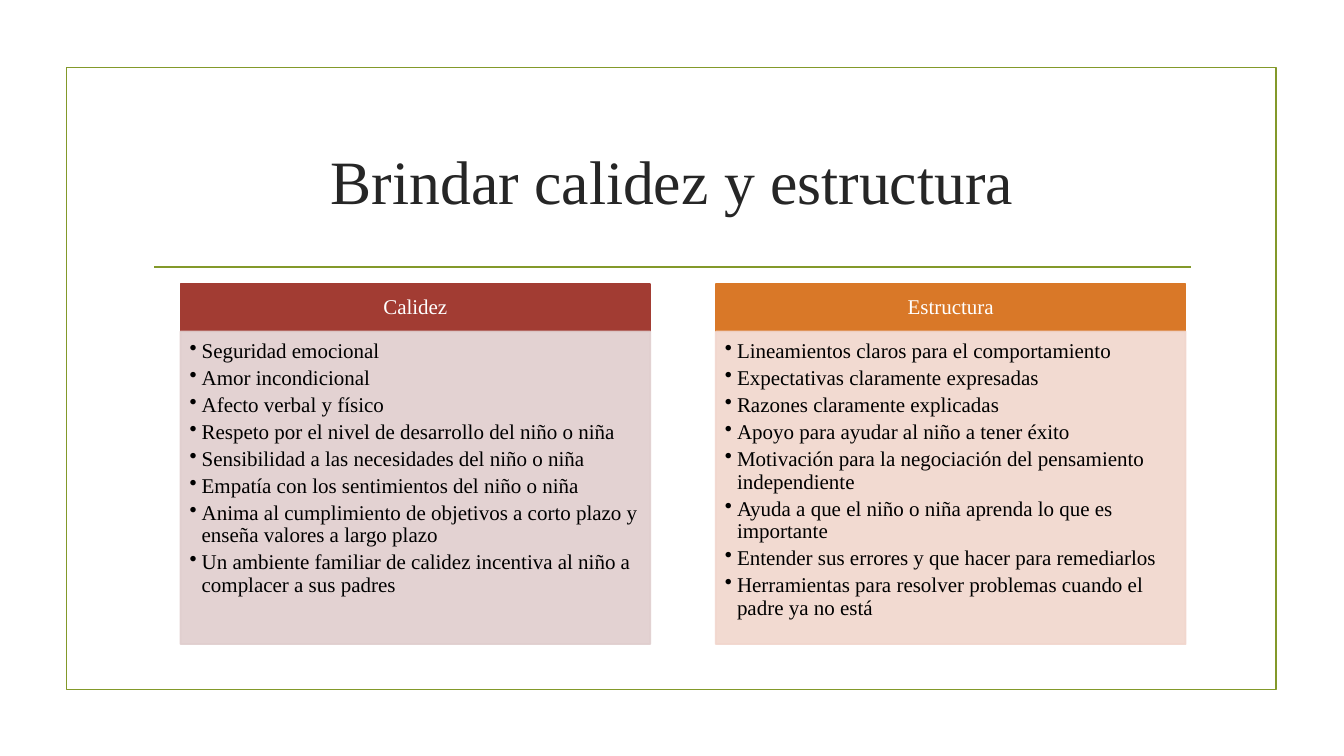
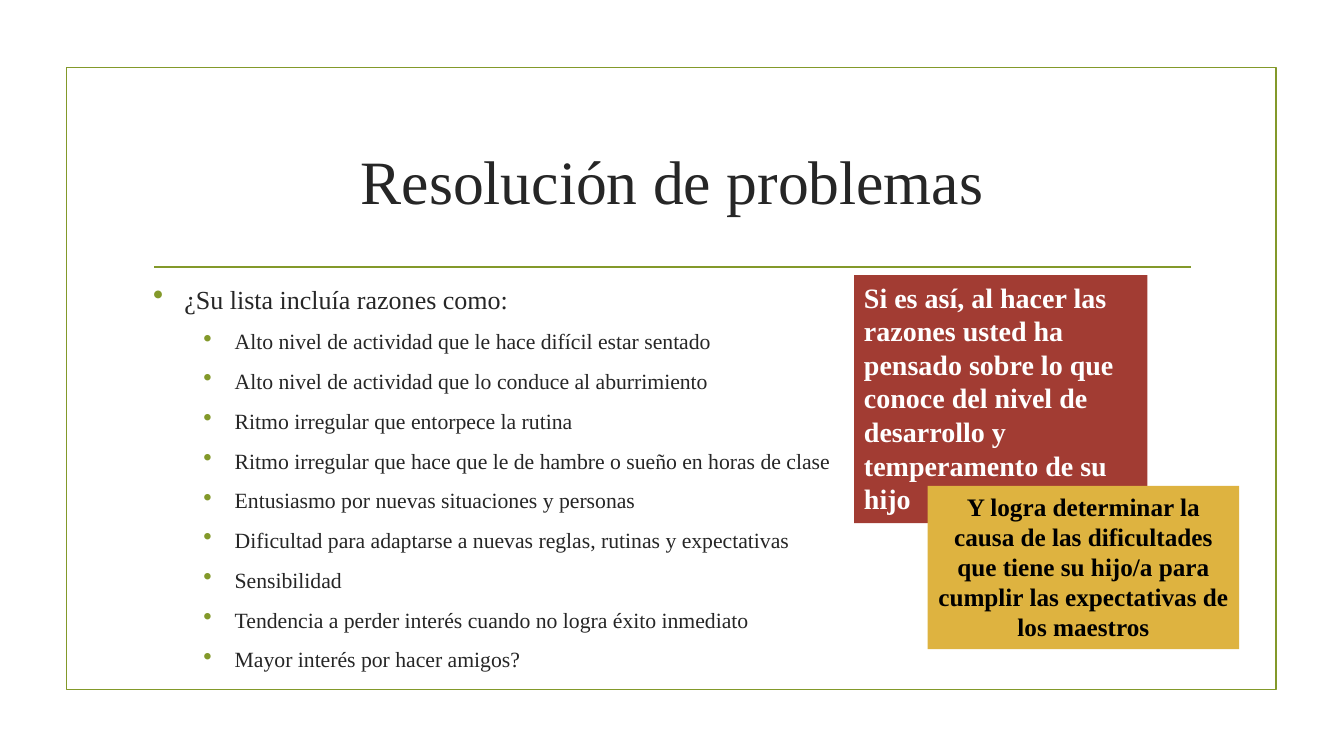
from lxml import etree
from pptx import Presentation, util as u
from pptx.dml.color import RGBColor
from pptx.enum import shapes, text
from pptx.oxml.ns import qn

COLORS = {
    "olive": "83992A", "ink": "262626", "black": "000000", "white": "FFFFFF",
    "red": "A23C33", "orange": "D97828", "yellow": "DEB340",
    "pale_red": "E0CECE", "pale_orange": "F1D6CD",
}
FONT = "Times New Roman"
LINE_WIDTH = u.Pt(1.25)
LEFT, CENTER, JUSTIFY = (text.PP_ALIGN.LEFT, text.PP_ALIGN.CENTER,
                         text.PP_ALIGN.JUSTIFY)
TOP, MIDDLE = text.MSO_ANCHOR.TOP, text.MSO_ANCHOR.MIDDLE
MARGINS = (0.1, 0.05, 0.1, 0.05)


def rgb(name):
    return RGBColor.from_string(COLORS[name])


def set_all(target, values):
    for name, value in values.items():
        setattr(target, name, value)


def set_alpha(fill_parent, percent):
    color = fill_parent.find(qn("a:solidFill"))[0]
    etree.SubElement(color, qn("a:alpha"), val=str(percent * 1000))


class Deck:
    """Holds the shared style and the current page."""

    def __init__(self):
        self.show = Presentation()
        self.show.slide_width = u.Inches(13.33)
        self.show.slide_height = u.Inches(7.5)
        self.page = None

    def add_page(self, title):
        self.page = self.show.slides.add_slide(self.show.slide_layouts[6])
        self.rect((0.66, 0.67, 12, 6.17), line="olive")
        self.rule(1.53, 11.81, 2.65)
        box = self.textbox((1.42, 1.07, 10.5, 1.43), anchor=MIDDLE)
        self.add_para(box, title, 44, "ink", align=CENTER)

    def rect(self, place, fill=None, line=None, alpha=None):
        box = self.page.shapes.add_shape(
            shapes.MSO_SHAPE.RECTANGLE, *map(u.Inches, place))
        box.shadow.inherit = False
        for part, color in ((box.fill, fill), (box.line.fill, line)):
            if color:
                part.solid()
                part.fore_color.rgb = rgb(color)
            else:
                part.background()
        if line:
            box.line.width = LINE_WIDTH
        if alpha:
            properties = box._element.spPr
            set_alpha(properties, alpha)
            set_alpha(properties.find(qn("a:ln")), alpha)
        return box

    def rule(self, start, end, top):
        line = self.page.shapes.add_connector(
            shapes.MSO_CONNECTOR.STRAIGHT,
            *map(u.Inches, (start, top, end, top)))
        line.line.color.rgb = rgb("olive")
        line.line.width = LINE_WIDTH
        etree.SubElement(line._element.spPr, qn("a:effectLst"))

    def textbox(self, place, anchor=TOP):
        box = self.page.shapes.add_textbox(*map(u.Inches, place))
        self.frame(box, anchor)
        return box

    def frame(self, box, anchor=TOP, margins=MARGINS):
        left, top, right, bottom = map(u.Inches, margins)
        set_all(box.text_frame, {
            "word_wrap": True, "vertical_anchor": anchor,
            "margin_left": left, "margin_top": top,
            "margin_right": right, "margin_bottom": bottom,
        })

    def add_para(self, box, words, size, color, align=LEFT, bold=False,
                 bullet=None, **spacing):
        """Fill the empty first paragraph, or add one after the others."""
        paras = box.text_frame.paragraphs
        first = len(paras) == 1 and not paras[0].runs
        para = paras[0] if first else box.text_frame.add_paragraph()
        if bullet:
            self.bullet(para, **bullet)
        if first:
            spacing.pop("space_before", None)
        set_all(para, {"alignment": align, **spacing})
        span = para.add_run()
        span.text = words
        set_all(span.font, {"name": FONT, "size": u.Pt(size), "bold": bold})
        span.font.color.rgb = rgb(color)

    def bullet(self, para, indent, hang, color=None, percent=100):
        props = para._p.get_or_add_pPr()
        props.set("marL", str(u.Inches(indent)))
        props.set("indent", str(-u.Inches(hang)))
        if color:
            holder = etree.SubElement(props, qn("a:buClr"))
            etree.SubElement(holder, qn("a:srgbClr"), val=COLORS[color])
        etree.SubElement(props, qn("a:buSzPct"), val=str(percent * 1000))
        etree.SubElement(props, qn("a:buChar"), char="•")

    def column(self, left, heading, items, color, pale):
        """A coloured heading above a pale panel with a bulleted list."""
        width = 4.66
        head = self.rect((left, 2.82, width, 0.47), color, color)
        self.frame(head, MIDDLE, (0.12, 0.07, 0.12, 0.07))
        self.add_para(head, heading, 15, "white", CENTER, line_spacing=0.9)
        panel = self.rect((left, 3.29, width, 3.1), pale, pale, alpha=90)
        self.frame(panel, margins=(0.09, 0.09, 0.12, 0.13))
        for item in items:
            self.add_para(panel, item, 15, "black", line_spacing=0.9,
                          space_after=u.Pt(3),
                          bullet={"indent": 0.12, "hang": 0.12})

    def outline(self, place, question, items):
        box = self.textbox(place)
        rows = [(question, 18.6, 0.31)] + [(item, 15.5, 0.81) for item in items]
        for words, size, indent in rows:
            self.add_para(box, words, size, "ink", JUSTIFY,
                          space_before=u.Pt(3.8), space_after=u.Pt(6),
                          bullet={"indent": indent, "hang": 0.31,
                                  "color": "olive", "percent": 115})

    def callout(self, place, words, size, fill, color, align=LEFT):
        box = self.rect(place, fill)
        self.frame(box)
        self.add_para(box, words, size, color, align, bold=True)


COLUMNS = [
    ("Calidez", [
        "Seguridad emocional",
        "Amor incondicional",
        "Afecto verbal y físico",
        "Respeto por el nivel de desarrollo del niño o niña",
        "Sensibilidad a las necesidades del niño o niña",
        "Empatía con los sentimientos del niño o niña",
        "Anima al cumplimiento de objetivos a corto plazo y enseña valores "
        "a largo plazo",
        "Un ambiente familiar de calidez incentiva al niño a complacer "
        "a sus padres",
    ], "red", "pale_red"),
    ("Estructura", [
        "Lineamientos claros para el comportamiento",
        "Expectativas claramente expresadas",
        "Razones claramente explicadas",
        "Apoyo para ayudar al niño a tener éxito",
        "Motivación para la negociación del pensamiento independiente",
        "Ayuda a que el niño o niña aprenda lo que es importante",
        "Entender sus errores y que hacer para remediarlos",
        "Herramientas para resolver problemas cuando el padre ya no está",
    ], "orange", "pale_orange"),
]
REASONS = [
    "Alto nivel de actividad que le hace difícil estar sentado",
    "Alto nivel de actividad que lo conduce al aburrimiento",
    "Ritmo irregular que entorpece la rutina",
    "Ritmo irregular que hace que le de hambre o sueño en horas de clase",
    "Entusiasmo por nuevas situaciones y personas",
    "Dificultad para adaptarse a nuevas reglas, rutinas y expectativas",
    "Sensibilidad",
    "Tendencia a perder interés cuando no logra éxito inmediato",
    "Mayor interés por hacer amigos?",
]


def main():
    deck = Deck()

    # Warmth and structure, side by side
    deck.add_page("Brindar calidez y estructura")
    for index, column in enumerate(COLUMNS):
        deck.column(1.79 + index * 5.31, *column)

    # Problem solving: reasons and two callouts
    deck.add_page("Resolución de problemas")
    deck.outline((1.42, 2.76, 6.93, 3.7), "¿Su lista incluía razones como:",
                 REASONS)
    deck.callout((8.47, 2.73, 2.91, 2.46),
                 "Si es así, al hacer las razones usted ha pensado sobre lo "
                 "que conoce del nivel de desarrollo y temperamento de su hijo",
                 20, "red", "white")
    deck.callout((9.2, 4.82, 3.09, 1.62),
                 "Y logra determinar la causa de las dificultades que tiene "
                 "su hijo/a para cumplir las expectativas de los maestros",
                 18, "yellow", "black", CENTER)

    deck.show.save("out.pptx")


if __name__ == "__main__":
    main()
